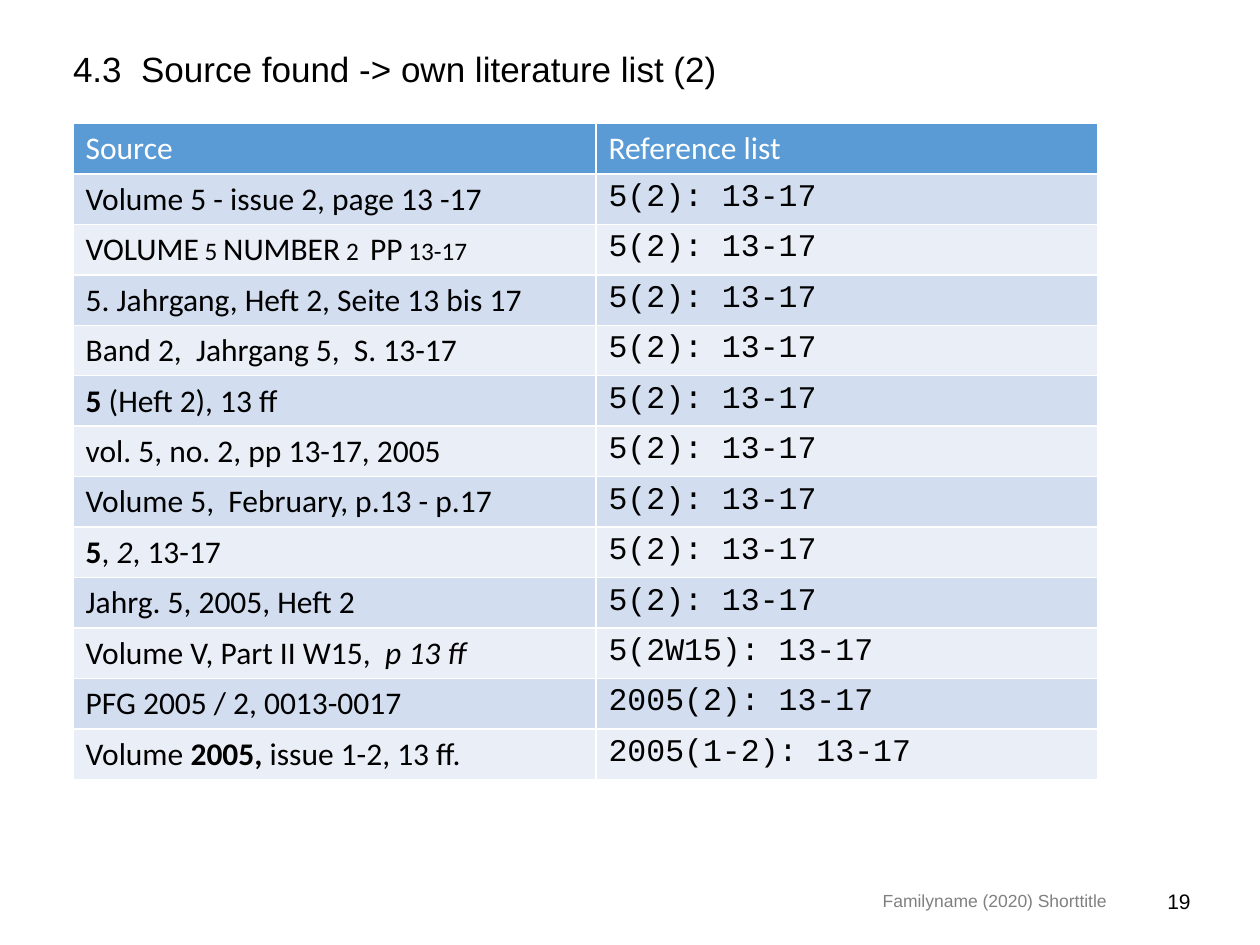
from lxml.etree import SubElement
from pptx import Presentation
from pptx.dml.color import RGBColor
from pptx.enum.text import MSO_ANCHOR as Anchor, PP_ALIGN as Align
from pptx.oxml.ns import qn
from pptx.util import Inches, Pt

WIDTH, HEIGHT = 10, 7.5
LEFT = 0.58
ROW_HEIGHT = 0.4
COLUMNS = (4.15, 3.98)
COLORS = {
    "header": "5B9BD5",
    "odd": "D2DEEF",
    "even": "EAEFF7",
    "white": "FFFFFF",
    "black": "000000",
    "gray": "808080",
}
BOLD, ITALIC, SMALL = {"bold": True}, {"italic": True}, {"small": True}
USUAL = "5(2): 13-17"
ROWS = [
    ([("Volume 5 - issue 2, page 13 -17", {})], USUAL),
    ([("VOLUME 5 NUMBER 2  PP 13-17", SMALL)], USUAL),
    ([("5. Jahrgang, Heft 2, Seite 13 bis 17", {})], USUAL),
    ([("Band 2,  Jahrgang 5,  S. 13-17", {})], USUAL),
    ([("5", BOLD), (" (Heft 2), 13 ff", {})], USUAL),
    ([("vol. 5, no. 2, pp 13-17, 2005", {})], USUAL),
    ([("Volume 5,  February, p.13 - p.17", {})], USUAL),
    ([("5", BOLD), (", ", {}), ("2", ITALIC), (", 13-17", {})], USUAL),
    ([("Jahrg. 5, 2005, Heft 2", {})], USUAL),
    ([("Volume V, Part II W15,  ", {}), ("p 13 ff", ITALIC)], "5(2W15): 13-17"),
    ([("PFG 2005 / 2, 0013-0017", {})], "2005(2): 13-17"),
    ([("Volume ", {}), ("2005, ", BOLD), ("issue 1-2, 13 ff.", {})], "2005(1-2): 13-17"),
]


def color(name):
    """Return the named colour."""
    return RGBColor.from_string(COLORS[name])


def add_span(para, text, size=18, face="Calibri", ink="black",
             bold=False, italic=False, small=False):
    """Append formatted text to a paragraph."""
    span = para.add_run()
    span.text = text
    font = span.font
    font.size, font.name, font.bold, font.italic = Pt(size), face, bold, italic
    font.color.rgb = color(ink)
    if small:
        span._r.get_or_add_rPr().set("cap", "small")


def add_text(page, text, left, top, width, height, anchor=Anchor.MIDDLE,
             align=Align.RIGHT, inset_left=0.1, inset_right=0.1, spacing=None, **style):
    """Add a one-line text box in Arial."""
    box = page.shapes.add_textbox(*map(Inches, (left, top, width, height)))
    frame = box.text_frame
    frame.word_wrap = True
    frame.vertical_anchor = anchor
    frame.margin_left, frame.margin_right = Inches(inset_left), Inches(inset_right)
    para = frame.paragraphs[0]
    para.alignment = align
    para.line_spacing = spacing
    add_span(para, text, face="Arial", **style)


def add_borders(cell):
    """Draw white lines on the four sides of a cell."""
    properties = cell._tc.get_or_add_tcPr()
    for side in ("lnL", "lnR", "lnT", "lnB"):
        line = SubElement(properties, qn(f"a:{side}"), w=str(Pt(1)))
        fill = SubElement(line, qn("a:solidFill"))
        SubElement(fill, qn("a:srgbClr"), val=COLORS["white"])


def fill_cell(cell, spans, fill, **style):
    """Write spans into a cell and colour it."""
    add_borders(cell)
    cell.fill.solid()
    cell.fill.fore_color.rgb = color(fill)
    for text, extra in spans:
        add_span(cell.text_frame.paragraphs[0], text, **style, **extra)


def add_reference_table(page):
    """Add the table that pairs source wording with list entries."""
    count = len(ROWS) + 1
    table = page.shapes.add_table(
        count, len(COLUMNS), Inches(LEFT), Inches(0.98),
        Inches(sum(COLUMNS)), Inches(count * ROW_HEIGHT)).table
    for column, width in zip(table.columns, COLUMNS):
        column.width = Inches(width)
    for row in table.rows:
        row.height = Inches(ROW_HEIGHT)
    for index, heading in enumerate(("Source", "Reference list")):
        fill_cell(table.cell(0, index), [(heading, {})], "header", ink="white")
    for index, (source, reference) in enumerate(ROWS, start=1):
        band = "odd" if index % 2 else "even"
        fill_cell(table.cell(index, 0), source, band)
        fill_cell(table.cell(index, 1), [(reference, {})], band, face="Courier New")


def main():
    """Build and save the deck."""
    deck = Presentation()
    deck.slide_width, deck.slide_height = Inches(WIDTH), Inches(HEIGHT)
    page = deck.slides.add_slide(deck.slide_layouts[6])
    add_text(page, "4.3  Source found -> own literature list (2)", LEFT, 0.17, 7.94, 0.59,
             anchor=Anchor.BOTTOM, align=Align.LEFT, inset_left=0, spacing=0.9, size=20)
    add_reference_table(page)
    add_text(page, "Familyname (2020) Shorttitle", 5.27, 6.95, 3.61, ROW_HEIGHT,
             size=10, ink="gray")
    add_text(page, "19", 8.88, 6.95, 0.57, ROW_HEIGHT, inset_right=0, size=12)
    deck.save("out.pptx")


if __name__ == "__main__":
    main()
